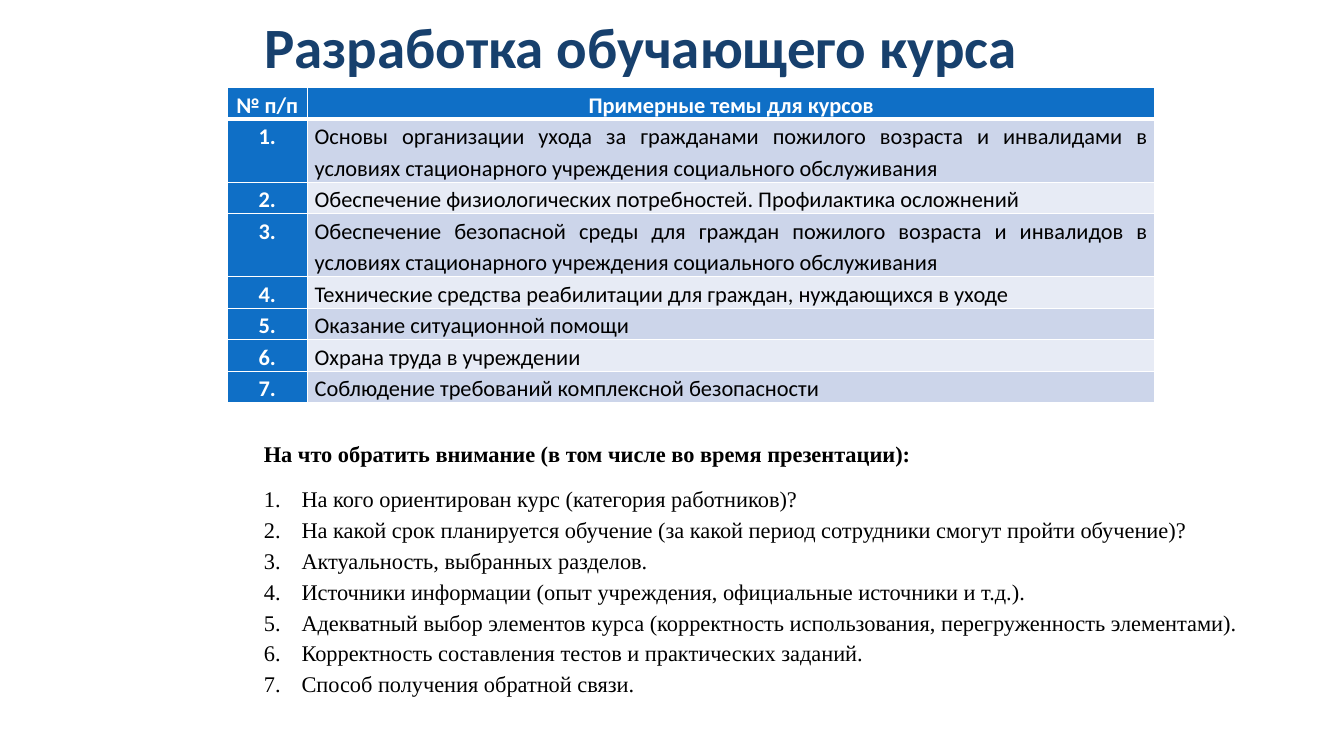
from lxml.etree import SubElement
from pptx import Presentation
from pptx.dml.color import RGBColor
from pptx.enum.text import MSO_ANCHOR, MSO_AUTO_SIZE, PP_ALIGN
from pptx.oxml.ns import qn
from pptx.util import Cm, Pt

TOPICS = [
    "Основы организации ухода за гражданами пожилого возраста и инвалидами в условиях стационарного учреждения социального обслуживания",
    "Обеспечение физиологических потребностей. Профилактика осложнений",
    "Обеспечение безопасной среды для граждан пожилого возраста и инвалидов в условиях стационарного учреждения социального обслуживания",
    "Технические средства реабилитации для граждан, нуждающихся в уходе",
    "Оказание ситуационной помощи",
    "Охрана труда в учреждении",
    "Соблюдение требований комплексной безопасности",
]
QUESTIONS = [
    "На кого ориентирован курс (категория работников)?",
    "На какой срок планируется обучение (за какой период сотрудники смогут пройти обучение)?",
    "Актуальность, выбранных разделов.",
    "Источники информации (опыт учреждения, официальные источники и т.д.).",
    "Адекватный выбор элементов курса (корректность использования, перегруженность элементами).",
    "Корректность составления тестов и практических заданий.",
    "Способ получения обратной связи.",
]


def color(value):
    return RGBColor.from_string(value)


class CourseSlide:
    navy, blue, white, black = "17406D", "0F6FC6", "FFFFFF", "000000"
    bands = ("CCD5EA", "E7EBF5")
    sans, serif = "Calibri", "Times New Roman"
    text_size = 16
    line_spacing = 1.15

    def __init__(self, presentation):
        self.slide = presentation.slides.add_slide(presentation.slide_layouts[5])

    def style(self, paragraph, font_name, size, font_color, bold, alignment, spacing):
        paragraph.alignment = alignment
        paragraph.line_spacing = spacing
        font = paragraph.font
        font.name, font.size, font.bold = font_name, Pt(size), bold
        font.color.rgb = color(font_color)

    def title(self, text, left, top, width, height):
        shape = self.slide.shapes.title
        shape.left, shape.top, shape.width, shape.height = map(Cm, (left, top, width, height))
        frame = shape.text_frame
        frame.text = text
        frame.auto_size = MSO_AUTO_SIZE.NONE
        frame.vertical_anchor = MSO_ANCHOR.MIDDLE
        self.style(frame.paragraphs[0], self.sans, 40.7, self.navy, True, PP_ALIGN.LEFT, 0.8)

    def borders(self, cell, top, bottom):
        properties = cell._tc.get_or_add_tcPr()
        for side, width in (("L", 1), ("R", 1), ("T", top), ("B", bottom)):
            line = SubElement(properties, qn(f"a:ln{side}"), w=str(Pt(width)))
            fill = SubElement(line, qn("a:solidFill"))
            SubElement(fill, qn("a:srgbClr"), val=self.white)

    def cell(self, cell, text, fill, strong, top=1, bottom=1):
        self.borders(cell, top, bottom)
        cell.fill.solid()
        cell.fill.fore_color.rgb = color(fill)
        cell.margin_left = cell.margin_right = Cm(0.18)
        cell.margin_top = cell.margin_bottom = 0
        cell.text = text
        self.style(cell.text_frame.paragraphs[0], self.sans, self.text_size,
                   self.white if strong else self.black, strong,
                   PP_ALIGN.CENTER if strong else PP_ALIGN.JUSTIFY, self.line_spacing)

    def table(self, headers, topics, left, top, column_widths, line_height):
        line_counts = [1] + [2 if len(topic) > 100 else 1 for topic in topics]
        table = self.slide.shapes.add_table(
            len(line_counts), len(headers), Cm(left), Cm(top),
            Cm(sum(column_widths)), Cm(line_height * sum(line_counts))).table
        for column, width in zip(table.columns, column_widths):
            column.width = Cm(width)
        for row, count in zip(table.rows, line_counts):
            row.height = Cm(line_height * count)
        for column, header in enumerate(headers):
            cell = table.cell(0, column)
            self.cell(cell, header, self.blue, True, bottom=3)
            cell.vertical_anchor = MSO_ANCHOR.MIDDLE
        for number, topic in enumerate(topics, 1):
            top_border = 3 if number == 1 else 1
            self.cell(table.cell(number, 0), f"{number}.", self.blue, True, top_border)
            self.cell(table.cell(number, 1), topic, self.bands[(number - 1) % 2], False, top_border)

    def numbered_list(self, heading, items, left, top, width, height):
        frame = self.slide.shapes.add_textbox(Cm(left), Cm(top), Cm(width), Cm(height)).text_frame
        frame.word_wrap = True
        frame.auto_size = MSO_AUTO_SIZE.SHAPE_TO_FIT_TEXT
        frame.text = "\n".join([heading, *items])
        for index, paragraph in enumerate(frame.paragraphs):
            if index:
                properties = paragraph._p.get_or_add_pPr()
                properties.set("marL", str(Cm(0.95)))
                properties.set("indent", str(-Cm(0.95)))
                SubElement(properties, qn("a:buFont"), typeface="+mj-lt")
                SubElement(properties, qn("a:buAutoNum"), type="arabicPeriod")
            self.style(paragraph, self.serif, self.text_size, self.black, index == 0,
                       PP_ALIGN.JUSTIFY, self.line_spacing)
            paragraph.space_after = Pt(10 if index in (0, len(items)) else 0)


def main():
    presentation = Presentation()
    presentation.slide_width, presentation.slide_height = Cm(33.87), Cm(19.05)
    course = CourseSlide(presentation)
    course.title("Разработка обучающего курса", 6.4, 0.43, 26.2, 1.78)
    course.table(("№ п/п", "Примерные темы для курсов"), TOPICS, 5.72, 2.21, (2.03, 21.36), 0.79)
    course.numbered_list("На что обратить внимание (в том числе во время презентации):",
                         QUESTIONS, 6.4, 10.87, 25.65, 6.86)
    presentation.save("out.pptx")


if __name__ == "__main__":
    main()
